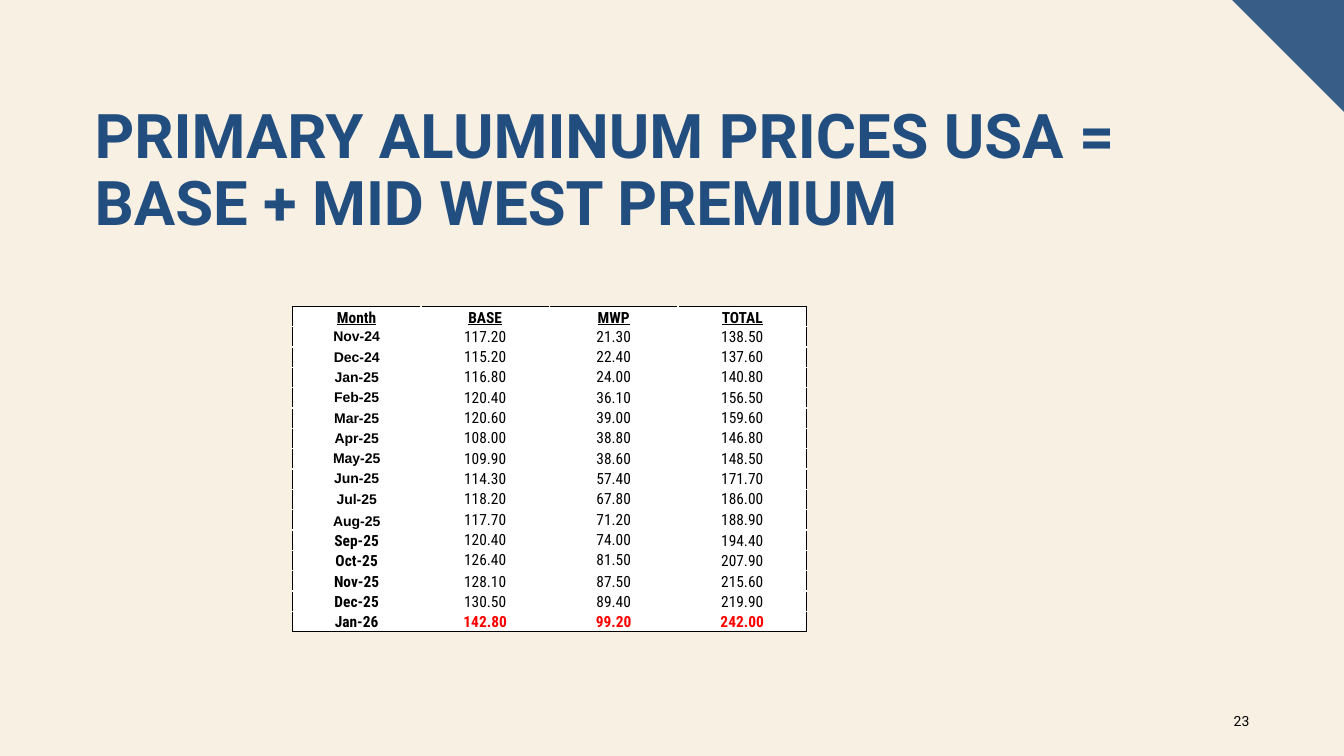
from lxml import etree
from pptx import Presentation
from pptx.dml.color import RGBColor
from pptx.enum.text import MSO_ANCHOR, PP_ALIGN
from pptx.oxml.ns import qn
from pptx.util import Inches, Pt

COLORS = {
    "background": "F8F0E3",
    "corner": "385E88",
    "title": "224E7F",
    "text": "000000",
    "cell": "FFFFFF",
    "latest": "FF0000",
}

HEADER = ["Month", "BASE", "MWP", "TOTAL"]
PRICES = [
    ["Nov-24", "117.20", "21.30", "138.50"],
    ["Dec-24", "115.20", "22.40", "137.60"],
    ["Jan-25", "116.80", "24.00", "140.80"],
    ["Feb-25", "120.40", "36.10", "156.50"],
    ["Mar-25", "120.60", "39.00", "159.60"],
    ["Apr-25", "108.00", "38.80", "146.80"],
    ["May-25", "109.90", "38.60", "148.50"],
    ["Jun-25", "114.30", "57.40", "171.70"],
    ["Jul-25", "118.20", "67.80", "186.00"],
    ["Aug-25", "117.70", "71.20", "188.90"],
    ["Sep-25", "120.40", "74.00", "194.40"],
    ["Oct-25", "126.40", "81.50", "207.90"],
    ["Nov-25", "128.10", "87.50", "215.60"],
    ["Dec-25", "130.50", "89.40", "219.90"],
    ["Jan-26", "142.80", "99.20", "242.00"],
]
# First row of each column whose text sits at the bottom of the cell
BOTTOM_FROM = [10, 13, 13, 11]


def style(p, size, name, color, bold=False):
    font = p.runs[0].font
    font.size = Pt(size)
    font.name = name
    font.bold = bold
    font.color.rgb = RGBColor.from_string(COLORS[color])


def add_border(cell, side, position):
    ln = etree.Element(qn(f"a:ln{side}"), w=str(Pt(1)))
    fill = etree.SubElement(ln, qn("a:solidFill"))
    etree.SubElement(fill, qn("a:srgbClr"), val=COLORS["text"])
    cell._tc.get_or_add_tcPr().insert(position, ln)


prs = Presentation()
prs.slide_width = Inches(13.33)
prs.slide_height = Inches(7.5)
s = prs.slides.add_slide(prs.slide_layouts[6])
s.background.fill.solid()
s.background.fill.fore_color.rgb = RGBColor.from_string(COLORS["background"])

# Corner triangle
builder = s.shapes.build_freeform(Inches(12.22), 0)
builder.add_line_segments([(Inches(13.33), 0), (Inches(13.33), Inches(1.11))])
sp = builder.convert_to_shape()
sp.shadow.inherit = False
sp.fill.solid()
sp.fill.fore_color.rgb = RGBColor.from_string(COLORS["corner"])
sp.line.fill.background()

# Title
sp = s.shapes.add_textbox(Inches(0.84), Inches(0.98), Inches(11.66), Inches(1.45))
tf = sp.text_frame
tf.word_wrap = True
tf.vertical_anchor = MSO_ANCHOR.MIDDLE
p = tf.paragraphs[0]
p.text = "PRIMARY ALUMINUM PRICES USA = BASE + MID WEST PREMIUM"
p.line_spacing = 0.9
style(p, 44, "Roboto", "title", bold=True)

# Price table
rows = [HEADER] + PRICES
last_row, last_col = len(rows) - 1, len(HEADER) - 1
frame = s.shapes.add_table(len(rows), len(HEADER), Inches(2.9), Inches(3.04),
                           Inches(5.1), Inches(3.23))
table = frame.table
table.first_row = False
table.horz_banding = False
for column in table.columns:
    column.width = Inches(5.1 / len(HEADER))
for row in table.rows:
    row.height = Inches(3.23 / len(rows))

for i, values in enumerate(rows):
    for j, value in enumerate(values):
        cell = table.cell(i, j)
        cell.margin_left = cell.margin_right = Inches(0.07)
        cell.margin_top = cell.margin_bottom = 0
        at_bottom = i == 0 or i >= BOTTOM_FROM[j]
        cell.vertical_anchor = MSO_ANCHOR.BOTTOM if at_bottom else MSO_ANCHOR.MIDDLE
        cell.fill.solid()
        cell.fill.fore_color.rgb = RGBColor.from_string(COLORS["cell"])

        p = cell.text_frame.paragraphs[0]
        p.text = value
        p.alignment = PP_ALIGN.CENTER
        arial = j == 0 and 1 <= i <= 10
        style(p, 10 if arial else 11, "Arial" if arial else "Roboto Condensed",
              "latest" if i == last_row and j > 0 else "text",
              bold=j == 0 or i in (0, last_row))
        if i == 0:
            p.runs[0].font.underline = True

        # Outer frame only
        edges = {"L": j == 0, "R": j == last_col, "T": i == 0, "B": i == last_row}
        sides = [side for side, on_edge in edges.items() if on_edge]
        for position, side in enumerate(sides):
            add_border(cell, side, position)

# Slide number
sp = s.shapes.add_textbox(Inches(11.99), Inches(6.95), Inches(0.5), Inches(0.4))
tf = sp.text_frame
tf.word_wrap = True
tf.vertical_anchor = MSO_ANCHOR.MIDDLE
p = tf.paragraphs[0]
p.text = "23"
p.alignment = PP_ALIGN.RIGHT
style(p, 10, "Roboto", "text")

prs.save("out.pptx")
